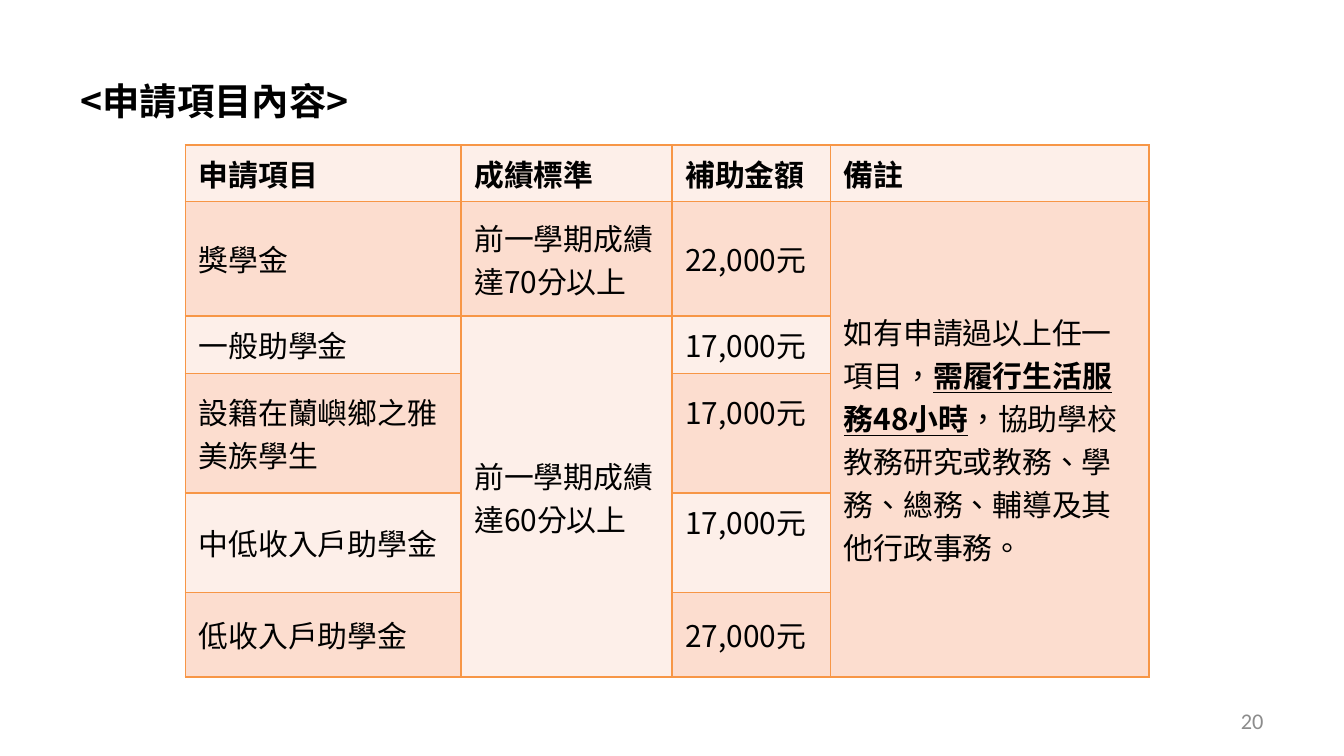
from typing import NamedTuple

from lxml import etree
from pptx import Presentation
from pptx.dml.color import RGBColor
from pptx.enum.text import MSO_ANCHOR, PP_ALIGN
from pptx.oxml.ns import qn
from pptx.util import Inches, Pt

MIDDLE = MSO_ANCHOR.MIDDLE
RIGHT = PP_ALIGN.RIGHT

BLACK = RGBColor(0x00, 0x00, 0x00)
GREY = RGBColor(0x8C, 0x8C, 0x8C)
ORANGE = RGBColor(0xF7, 0x96, 0x46)
BANDS = (RGBColor(0xFD, 0xEF, 0xE9), RGBColor(0xFC, 0xDD, 0xCF))

SLIDE_WIDTH = 10
SLIDE_HEIGHT = SLIDE_WIDTH * 9 / 16
CJK_FONT = "Noto Sans CJK SC"
COLUMN_WIDTHS = (2.05, 1.57, 1.18, 2.37)
ROW_HEIGHTS = (0.42, 0.85, 0.43, 0.89, 0.74, 0.63)
TEXT_LINE = 0.32


class Span(NamedTuple):
    text: str
    bold: bool = False
    underline: bool = False


class Entry(NamedTuple):
    row: int
    col: int
    spans: tuple[Span, ...]
    rows: int = 1
    lines_below: int = 0


HEADERS = ("申請項目", "成績標準", "補助金額", "備註")
ITEMS = ("獎學金", "一般助學金", "設籍在蘭嶼鄉之雅美族學生", "中低收入戶助學金", "低收入戶助學金")
AMOUNTS = ("22,000元", "17,000元", "17,000元", "17,000元", "27,000元")
RAISED_ROWS = (3, 4)
REMARK = (
    Span("如有申請過以上任一項目，"),
    Span("需履行生活服務48小時", bold=True, underline=True),
    Span("，協助學校教務研究或教務、學務、總務、輔導及其他行政事務。"),
)

ENTRIES = (
    [Entry(0, c, (Span(text, bold=True),)) for c, text in enumerate(HEADERS)]
    + [Entry(r, 0, (Span(text),)) for r, text in enumerate(ITEMS, 1)]
    + [Entry(r, 2, (Span(text),), lines_below=int(r in RAISED_ROWS))
       for r, text in enumerate(AMOUNTS, 1)]
    + [
        Entry(1, 1, (Span("前一學期成績達70分以上"),)),
        Entry(2, 1, (Span("前一學期成績達60分以上"),), rows=4),
        Entry(1, 3, REMARK, rows=5),
    ]
)


def add_span(p, span: Span, size: float, font: str = CJK_FONT, color: RGBColor = BLACK) -> None:
    """Add a run whose Latin and East Asian text share one font."""
    r = p.add_run()
    r.text = span.text
    r.font.size = Pt(size)
    r.font.bold = span.bold
    r.font.underline = span.underline
    r.font.color.rgb = color
    r.font.name = font
    rPr = r.font._element
    rPr.set("lang", "zh-TW")
    etree.SubElement(rPr, qn("a:ea"), typeface=font)


def add_text_box(slide, left: float, top: float, width: float, height: float):
    box = slide.shapes.add_textbox(*map(Inches, (left, top, width, height)))
    box.text_frame.word_wrap = True
    return box.text_frame


def style_cell(cell, fill: RGBColor) -> None:
    """Draw the four borders, then fill the cell."""
    tcPr = cell._tc.get_or_add_tcPr()
    for side in ("lnL", "lnR", "lnT", "lnB"):
        ln = etree.SubElement(tcPr, qn(f"a:{side}"), w=str(Pt(1)))
        solid = etree.SubElement(ln, qn("a:solidFill"))
        etree.SubElement(solid, qn("a:srgbClr"), val=str(ORANGE))
    cell.fill.solid()
    cell.fill.fore_color.rgb = fill


def add_grant_table(slide) -> None:
    frame = slide.shapes.add_table(
        len(ROW_HEIGHTS), len(COLUMN_WIDTHS), Inches(1.38), Inches(1.08),
        Inches(sum(COLUMN_WIDTHS)), Inches(sum(ROW_HEIGHTS)))
    table = frame.table
    for column, width in zip(table.columns, COLUMN_WIDTHS):
        column.width = Inches(width)
    for i, (row, height) in enumerate(zip(table.rows, ROW_HEIGHTS)):
        row.height = Inches(height)
        for cell in row.cells:
            style_cell(cell, BANDS[i % 2])
    for entry in ENTRIES:
        cell = table.cell(entry.row, entry.col)
        if entry.rows > 1:
            cell.merge(table.cell(entry.row + entry.rows - 1, entry.col))
        cell.vertical_anchor = MIDDLE
        cell.margin_bottom = Inches(0.05 + entry.lines_below * TEXT_LINE)
        for span in entry.spans:
            add_span(cell.text_frame.paragraphs[0], span, 16)


def main() -> None:
    prs = Presentation()
    prs.slide_width, prs.slide_height = Inches(SLIDE_WIDTH), Inches(SLIDE_HEIGHT)
    s = prs.slides.add_slide(prs.slide_layouts[6])

    title = add_text_box(s, 0.5, 0.53, 9, 4.5)
    add_span(title.paragraphs[0], Span("<申請項目內容>", bold=True), 20)

    add_grant_table(s)

    number = add_text_box(s, 7.17, 5.21, 2.33, 0.3)
    number.vertical_anchor = MIDDLE
    number.paragraphs[0].alignment = RIGHT
    add_span(number.paragraphs[0], Span("20"), 12, "Calibri", GREY)

    prs.save("out.pptx")


if __name__ == "__main__":
    main()
